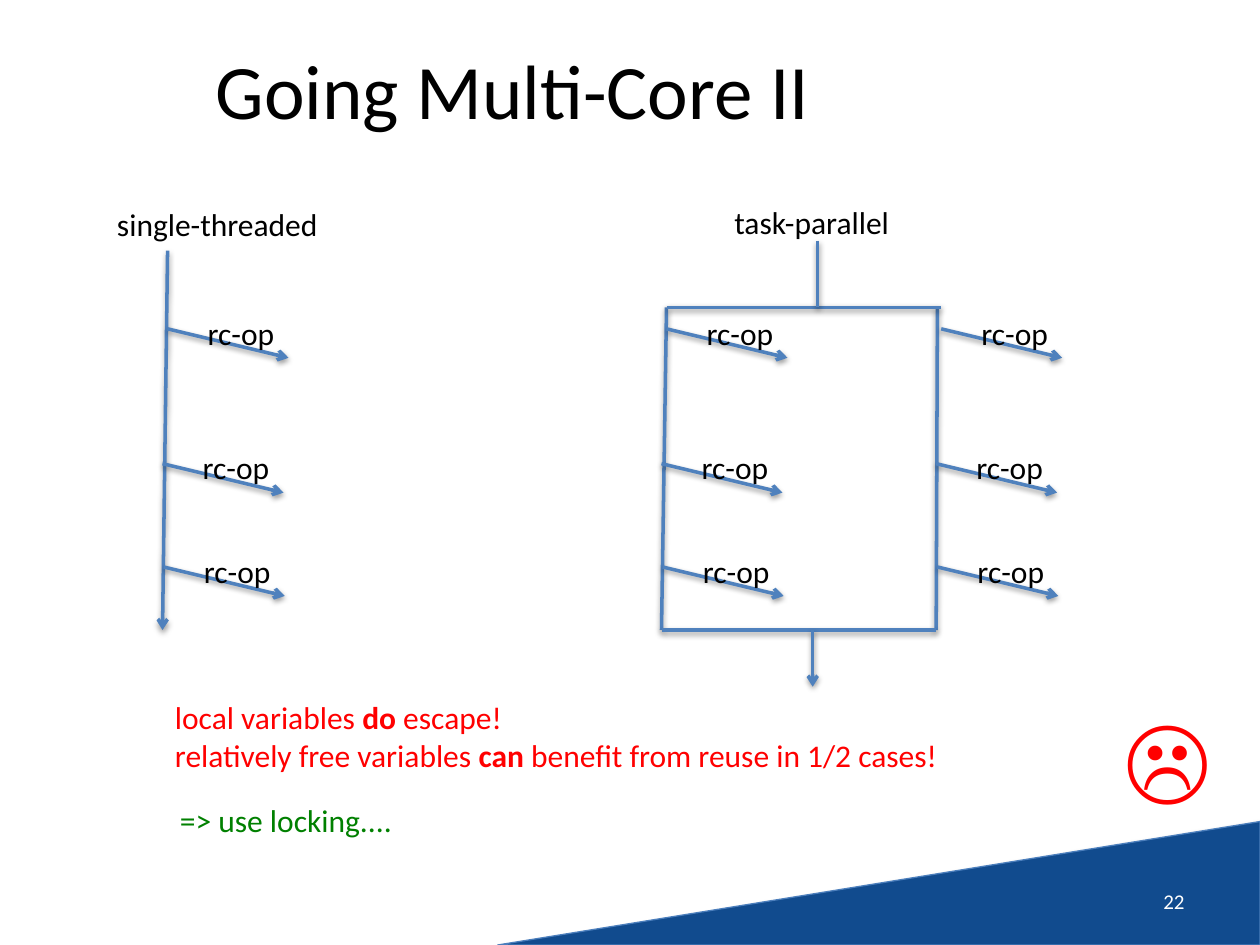
"""Build the slide comparing single-threaded and task-parallel reference counting."""
from dataclasses import dataclass

from lxml import etree
from pptx import Presentation
from pptx import util as u
from pptx.dml.color import RGBColor
from pptx.enum import shapes, text
from pptx.oxml import ns


@dataclass(frozen=True)
class Theme:
    font: str = "Calibri"
    ink: str = "000000"
    line: str = "4F81BD"
    wedge: str = "114B8E"
    wedge_edge: str = "4B7EBC"
    warn: str = "FF0000"
    fix: str = "008000"
    paper: str = "FFFFFF"
    title: int = 44
    face: int = 54
    body: int = 18
    small: int = 12


T = Theme()
W, H = 10, 7.5

TITLE = "Going Multi-Core II"
NUMBER = "22"
OPERATION = "rc-op"
LABELS = [("single-threaded", 0.83, 1.58, 1.81), ("task-parallel", 5.73, 1.56, 1.44)]
FINDINGS = [
    [("local variables ", False), ("do", True), (" escape!", False)],
    [("relatively free variables ", False), ("can ", True),
     ("benefit from reuse in 1/2 cases!", False)],
]
REMEDY = [[("=> use locking....", False)]]
SAD = [[("☹", True)]]

THREADS = [1.33, 5.29, 7.47]
OPERATIONS = [(2.61, 0), (3.68, -0.04), (4.5, -0.03)]
FORK, JOIN = 2.44, 5
LEAN = 0.04
BRANCH = (0.96, 0.23)
LABEL_SHIFT = (0.22, -0.17)


def rgb(value):
    return RGBColor.from_string(value)


def add_shadow(sp, alpha, dist):
    props = sp._element.spPr
    for old in props.findall(ns.qn("a:effectLst")):
        props.remove(old)
    effects = etree.SubElement(props, ns.qn("a:effectLst"))
    shadow = etree.SubElement(effects, ns.qn("a:outerShdw"), blurRad="40000",
                              dist=str(dist), dir="5400000", rotWithShape="0")
    color = etree.SubElement(shadow, ns.qn("a:srgbClr"), val=T.ink)
    etree.SubElement(color, ns.qn("a:alpha"), val=str(alpha * 1000))


def add_line(s, start, end, arrow=False):
    sp = s.shapes.add_connector(shapes.MSO_CONNECTOR.STRAIGHT,
                                *(u.Inches(v) for v in (*start, *end)))
    sp.line.color.rgb = rgb(T.line)
    sp.line.width = u.Pt(2)
    if arrow:
        etree.SubElement(sp.line._get_or_add_ln(), ns.qn("a:tailEnd"), type="arrow")
    add_shadow(sp, 38, 20000)


def style(p, size, color):
    p.font.name = T.font
    p.font.size = u.Pt(size)
    p.font.color.rgb = rgb(color)


def add_text(s, box, paragraphs, size=T.body, color=T.ink):
    tf = s.shapes.add_textbox(*(u.Inches(v) for v in box)).text_frame
    tf.word_wrap = False
    for i, runs in enumerate(paragraphs):
        p = tf.paragraphs[0] if i == 0 else tf.add_paragraph()
        for words, bold in runs:
            r = p.add_run()
            r.text = words
            if bold:
                r.font.bold = True
        style(p, size, color)
    return tf


def add_wedge(s, width=6.05, height=0.98):
    left, top = W - width / 2 - height / 2, H - height / 2 - width / 2
    sp = s.shapes.add_shape(shapes.MSO_SHAPE.RIGHT_TRIANGLE,
                            *(u.Inches(v) for v in (left, top, height, width)))
    sp.rotation = 270
    sp.fill.solid()
    sp.fill.fore_color.rgb = rgb(T.wedge)
    sp.line.color.rgb = rgb(T.wedge_edge)
    sp.line.width = u.Pt(0.75)
    add_shadow(sp, 35, 23000)


def add_title(s):
    title = s.shapes.title
    title.left, title.top, title.width, title.height = (
        u.Inches(v) for v in (0.5, 0.08, 7.14, 1.25))
    title.text_frame.text = TITLE
    title.text_frame.vertical_anchor = text.MSO_ANCHOR.MIDDLE
    p = title.text_frame.paragraphs[0]
    p.alignment = text.PP_ALIGN.CENTER
    style(p, T.title, T.ink)


def add_number(s):
    tf = add_text(s, (7.17, 6.95, 2.33, 0.4), [[(NUMBER, False)]], T.small, T.paper)
    tf.word_wrap = True
    tf.vertical_anchor = text.MSO_ANCHOR.MIDDLE
    tf.paragraphs[0].alignment = text.PP_ALIGN.RIGHT


def add_threads(s):
    single, left, right = THREADS
    add_line(s, (single, 1.99), (single - LEAN, JOIN), arrow=True)
    add_line(s, (left, FORK), (left - LEAN, JOIN))
    add_line(s, (right - 0.03, FORK), (right - LEAN, JOIN))
    for y, shift in ((FORK, 0), (JOIN, -LEAN)):
        add_line(s, (left + shift, y), (right + shift, y))
    add_line(s, (6.49, 1.91), (6.49, FORK))
    add_line(s, (6.45, JOIN), (6.45, 5.45), arrow=True)
    for thread in THREADS:
        for y, shift in OPERATIONS:
            x = thread + shift
            add_line(s, (x, y), (x + BRANCH[0], y + BRANCH[1]), arrow=True)
            add_text(s, (x + LABEL_SHIFT[0], y + LABEL_SHIFT[1], 0.74, 0.4),
                     [[(OPERATION, False)]])


def main():
    prs = Presentation()
    prs.slide_width, prs.slide_height = u.Inches(W), u.Inches(H)
    s = prs.slides.add_slide(prs.slide_layouts[5])
    add_wedge(s)
    add_title(s)
    add_number(s)
    add_threads(s)
    for words, left, top, width in LABELS:
        add_text(s, (left, top, width, 0.4), [[(words, False)]])
    add_text(s, (1.33, 6.31, 1.9, 0.4), REMEDY, color=T.fix)
    add_text(s, (1.29, 5.49, 6.31, 0.71), FINDINGS, color=T.warn)
    add_text(s, (8.83, 5.49, 0.84, 1.01), SAD, T.face, T.warn)
    prs.save("out.pptx")


if __name__ == "__main__":
    main()
